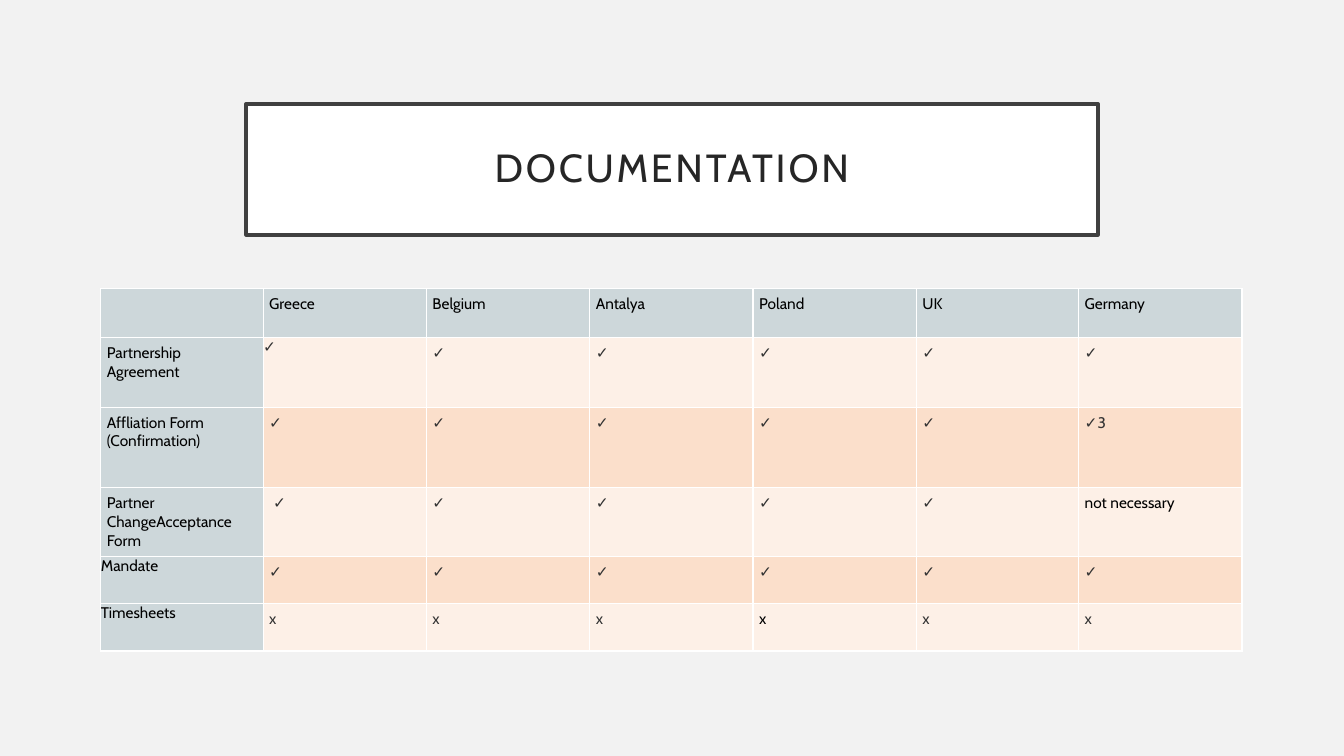
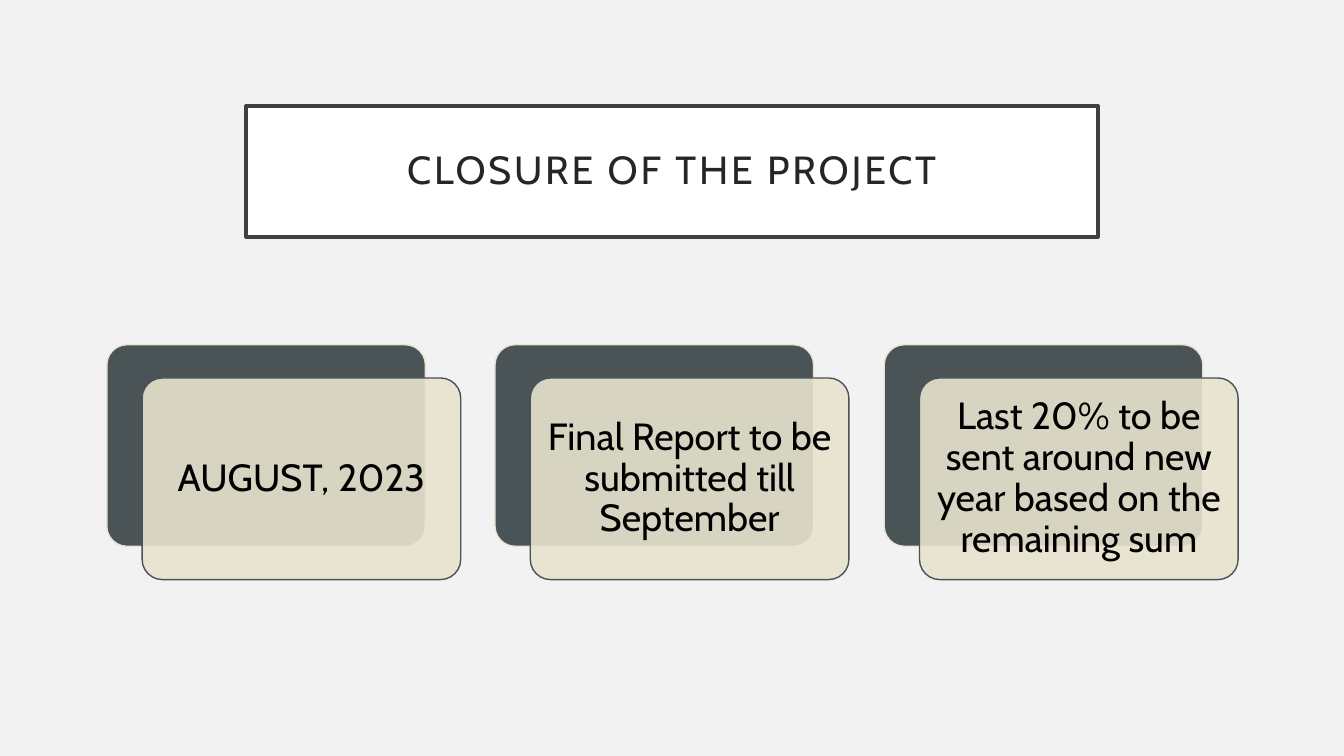
from dataclasses import dataclass
from typing import Any, NamedTuple

from lxml import etree
from pptx import Presentation
from pptx.dml.color import RGBColor
from pptx.enum.shapes import MSO_SHAPE
from pptx.enum.text import MSO_ANCHOR, PP_ALIGN
from pptx.oxml.ns import qn
from pptx.util import Pt

RECTANGLE = MSO_SHAPE.RECTANGLE
ROUNDED = MSO_SHAPE.ROUNDED_RECTANGLE
MIDDLE = MSO_ANCHOR.MIDDLE
CENTER = PP_ALIGN.CENTER

EMU_PER_PX = 9144
BLANK_LAYOUT = 6


@dataclass(frozen=True)
class Theme:
    font: str = "Cabin"
    background: str = "F2F2F2"
    white: str = "FFFFFF"
    black: str = "000000"
    frame: str = "404040"
    title: str = "262626"
    mark: str = "333333"
    heading: str = "CDD7DA"
    bands: tuple[str, str] = ("FDF0E7", "FBDFCB")
    slate: str = "4A5356"
    sand: str = "E8E3CE"
    title_size: int = 28
    card_size: int = 27
    table_size: int = 11
    title_tracking: int = 200
    frame_width: float = 2.5
    thin_width: int = 1


THEME = Theme()


class Box(NamedTuple):
    left: int
    top: int
    width: int
    height: int


@dataclass(frozen=True)
class Style:
    fill: str
    line: str
    line_width: float
    opacity: int = 100


@dataclass(frozen=True)
class Entry:
    text: str
    color: str = THEME.black
    inset: int = 6
    indent: int = 0


TITLE_STYLE = Style(THEME.white, THEME.frame, THEME.frame_width)
BACK_STYLE = Style(THEME.slate, THEME.sand, THEME.thin_width)
FRONT_STYLE = Style(THEME.sand, THEME.slate, THEME.thin_width, 90)

CHECK = Entry("✓", THEME.mark)
CROSS = Entry("x", THEME.mark)
TABLE_LEFT, TABLE_TOP = 100, 286
COLUMN_WIDTHS = (161, 162, 162, 162, 162, 161, 162)
ROW_HEIGHTS = (49, 69, 80, 66, 47, 47)
COUNTRIES = ("Greece", "Belgium", "Antalya", "Poland", "UK", "Germany")
TABLE_ROWS = [
    [Entry("")] + [Entry(country) for country in COUNTRIES],
    [Entry("Partnership Agreement"), Entry("✓", THEME.mark, inset=0)] + [CHECK] * 5,
    [Entry("Affliation Form (Confirmation)")] + [CHECK] * 5 + [Entry("✓3", THEME.mark)],
    [Entry("Partner ChangeAcceptance Form"), Entry("✓", THEME.mark, indent=4)]
    + [CHECK] * 4
    + [Entry("not necessary")],
    [Entry("Mandate", inset=0)] + [CHECK] * 6,
    [Entry("Timesheets", inset=0)] + [CROSS] * 3 + [Entry("x")] + [CROSS] * 2,
]

CARD = Box(106, 342, 316, 200)
CARDS_SPAN = 771
FRONT_SHIFT_X, FRONT_SHIFT_Y = 35, 33
CARD_TEXTS = (
    "AUGUST, 2023",
    "Final Report to be submitted till September",
    "Last 20% to be sent around new year based on the remaining sum",
)


def px(length: int) -> int:
    return length * EMU_PER_PX


def rgb(color: str) -> RGBColor:
    return RGBColor.from_string(color)


def apply_format(target: Any, values: dict[str, Any]) -> None:
    for name, value in values.items():
        setattr(target, name, value)


def margins(inset: int, indent: int = 0) -> dict[str, int]:
    values = {f"margin_{side}": px(inset) for side in ("left", "top", "right", "bottom")}
    values["margin_left"] += px(indent)
    return values


def write_text(frame: Any, text: str, size: int, color: str) -> Any:
    span = frame.paragraphs[0].add_run()
    span.text = text
    apply_format(span.font, {"name": THEME.font, "size": Pt(size), "bold": False})
    span.font.color.rgb = rgb(color)
    return span


def draw_panel(page: Any, kind: Any, box: Box, style: Style) -> Any:
    panel = page.shapes.add_shape(kind, *map(px, box))
    panel.shadow.inherit = False
    panel.fill.solid()
    panel.fill.fore_color.rgb = rgb(style.fill)
    panel.line.color.rgb = rgb(style.line)
    panel.line.width = Pt(style.line_width)
    if style.opacity < 100:
        color = panel._element.spPr.find(qn("a:solidFill"))[0]
        etree.SubElement(color, qn("a:alpha"), val=str(style.opacity * 1000))
    return panel


def write_centered(panel: Any, text: str, size: int, color: str, inset: int) -> Any:
    frame = panel.text_frame
    apply_format(frame, {"word_wrap": True, "vertical_anchor": MIDDLE, **margins(inset)})
    apply_format(frame.paragraphs[0], {"alignment": CENTER, "line_spacing": 0.9})
    return write_text(frame, text, size, color)


def draw_title(page: Any, text: str, top: int) -> None:
    panel = draw_panel(page, RECTANGLE, Box(244, top, 845, 130), TITLE_STYLE)
    span = write_centered(panel, text, THEME.title_size, THEME.title, 20)
    span._r.get_or_add_rPr().set("spc", str(THEME.title_tracking))


def draw_borders(cell: Any) -> None:
    properties = cell._tc.get_or_add_tcPr()
    for side in ("lnL", "lnR", "lnT", "lnB"):
        line = etree.SubElement(properties, qn(f"a:{side}"), w=str(Pt(THEME.thin_width)))
        fill = etree.SubElement(line, qn("a:solidFill"))
        etree.SubElement(fill, qn("a:srgbClr"), val=THEME.white)


def fill_cell(cell: Any, entry: Entry, color: str) -> None:
    draw_borders(cell)
    cell.fill.solid()
    cell.fill.fore_color.rgb = rgb(color)
    apply_format(cell, margins(entry.inset, entry.indent))
    if entry.text:
        write_text(cell.text_frame, entry.text, THEME.table_size, entry.color)


def draw_table(page: Any) -> None:
    box = Box(TABLE_LEFT, TABLE_TOP, sum(COLUMN_WIDTHS), sum(ROW_HEIGHTS))
    table = page.shapes.add_table(
        len(ROW_HEIGHTS), len(COLUMN_WIDTHS), *map(px, box)
    ).table
    apply_format(table, {"first_row": False, "horz_banding": False})
    for column, width in zip(table.columns, COLUMN_WIDTHS):
        column.width = px(width)
    for row, height in zip(table.rows, ROW_HEIGHTS):
        row.height = px(height)
    for row_index, entries in enumerate(TABLE_ROWS):
        for column_index, entry in enumerate(entries):
            is_heading = row_index == 0 or column_index == 0
            color = THEME.heading if is_heading else THEME.bands[(row_index - 1) % 2]
            fill_cell(table.cell(row_index, column_index), entry, color)


def draw_card(page: Any, index: int, text: str) -> None:
    gaps = len(CARD_TEXTS) - 1
    back = CARD._replace(left=CARD.left + CARDS_SPAN * index // gaps)
    front = back._replace(left=back.left + FRONT_SHIFT_X, top=back.top + FRONT_SHIFT_Y)
    for box, style in ((back, BACK_STYLE), (front, FRONT_STYLE)):
        panel = draw_panel(page, ROUNDED, box, style)
        panel.adjustments[0] = 0.1
    write_centered(panel, text, THEME.card_size, THEME.black, 11)


def build_documentation(page: Any) -> None:
    draw_title(page, "DOCUMENTATION", 103)
    draw_table(page)


def build_closure(page: Any) -> None:
    draw_title(page, "CLOSURE OF THE PROJECT", 105)
    for index, text in enumerate(CARD_TEXTS):
        draw_card(page, index, text)


def main() -> None:
    deck = Presentation()
    apply_format(deck, {"slide_width": px(1333), "slide_height": px(750)})
    background = deck.slide_master.background.fill
    background.solid()
    background.fore_color.rgb = rgb(THEME.background)
    for build in (build_documentation, build_closure):
        build(deck.slides.add_slide(deck.slide_layouts[BLANK_LAYOUT]))
    deck.save("out.pptx")


if __name__ == "__main__":
    main()
